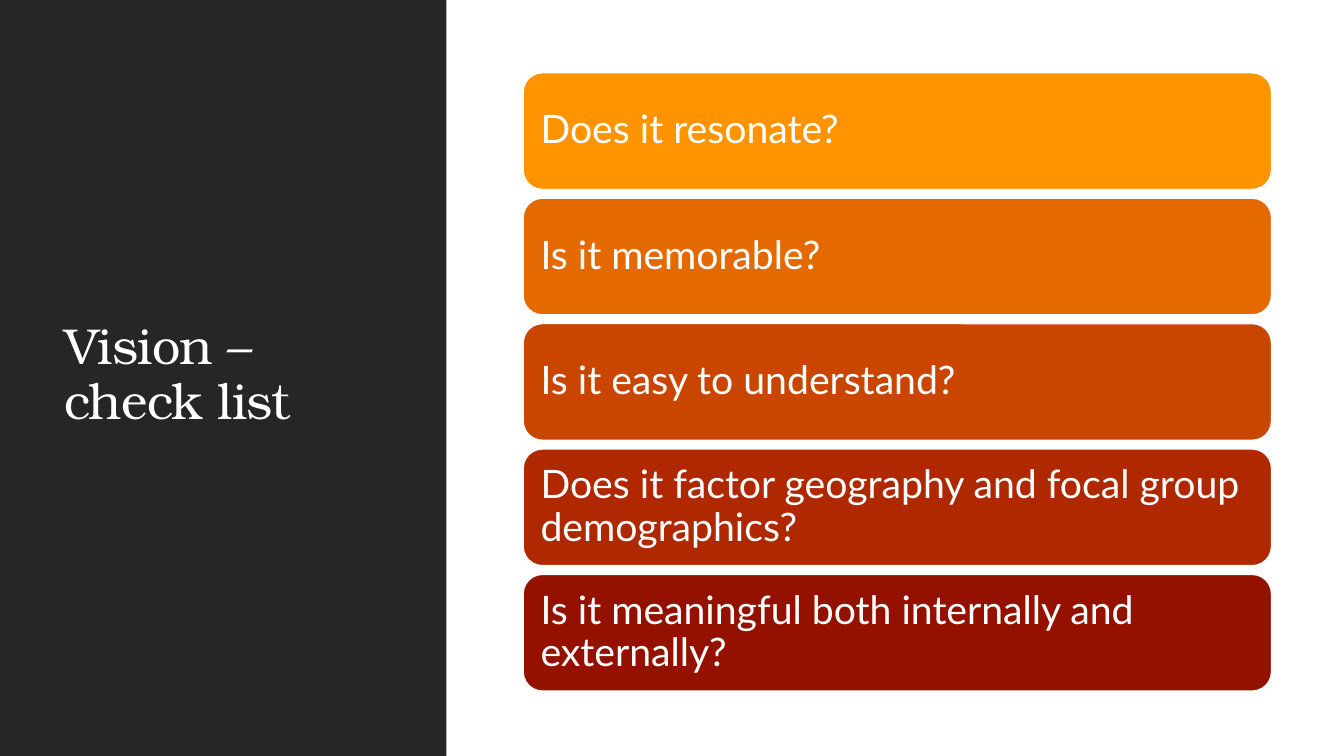
"""Build the vision check list slide."""
from pptx import Presentation
from pptx.dml.color import RGBColor
from pptx.enum.shapes import MSO_SHAPE
from pptx.enum.text import MSO_ANCHOR, PP_ALIGN
from pptx.util import Cm, Pt

RECTANGLE = MSO_SHAPE.RECTANGLE
ROUNDED_RECTANGLE = MSO_SHAPE.ROUNDED_RECTANGLE
MIDDLE = MSO_ANCHOR.MIDDLE
LEFT = PP_ALIGN.LEFT

WHITE = RGBColor(0xFF, 0xFF, 0xFF)
CHARCOAL = RGBColor(0x26, 0x26, 0x26)
AMBER = RGBColor(0xFF, 0x93, 0x00)
ORANGE = RGBColor(0xE4, 0x69, 0x00)
RUST = RGBColor(0xCA, 0x46, 0x00)
BRICK = RGBColor(0xAF, 0x28, 0x00)
DARK_RED = RGBColor(0x94, 0x11, 0x00)

TITLE_FONT = "TeX Gyre Bonum"
BODY_FONT = "Lato"

QUESTIONS = [
    ("Does it resonate?", AMBER),
    ("Is it memorable?", ORANGE),
    ("Is it easy to understand?", RUST),
    ("Does it factor geography and focal group demographics?", BRICK),
    ("Is it meaningful both internally and externally?", DARK_RED),
]
FIRST_BAR_TOP = 1.83
BAR_PITCH = 3.16


def write_text(shape, text, font_name, size):
    """Write one white, left-aligned line of text and return its run."""
    frame = shape.text_frame
    frame.word_wrap = True
    frame.vertical_anchor = MIDDLE
    paragraph = frame.paragraphs[0]
    paragraph.alignment = LEFT
    paragraph.line_spacing = 0.9
    run = paragraph.add_run()
    run.text = text
    run.font.name = font_name
    run.font.size = Pt(size)
    run.font.color.rgb = WHITE
    return run


def add_side_panel(slide, height):
    """Add the dark panel on the left."""
    panel = slide.shapes.add_shape(RECTANGLE, 0, 0, Cm(11.25), height)
    panel.shadow.inherit = False
    panel.fill.solid()
    panel.fill.fore_color.rgb = CHARCOAL
    panel.line.fill.background()


def add_title(slide, text):
    """Add the slide title with slightly tightened letters."""
    title = slide.shapes.add_textbox(Cm(1.37), Cm(1.45), Cm(8.56), Cm(16.03))
    run = write_text(title, text, TITLE_FONT, 36)
    run.font._element.set("spc", "-50")


def add_question_bar(slide, top, text, color):
    """Add one rounded bar holding a question."""
    bar = slide.shapes.add_shape(
        ROUNDED_RECTANGLE, Cm(13.18), Cm(top), Cm(18.87), Cm(2.95))
    bar.shadow.inherit = False
    bar.fill.solid()
    bar.fill.fore_color.rgb = color
    bar.line.color.rgb = WHITE
    bar.line.width = Pt(1.25)
    frame = bar.text_frame
    frame.margin_left = frame.margin_right = Cm(0.3)
    frame.margin_top = frame.margin_bottom = Cm(0.3)
    write_text(bar, text, BODY_FONT, 28)


def main():
    """Assemble and save the slide."""
    presentation = Presentation()
    presentation.slide_width = Cm(33.87)
    presentation.slide_height = Cm(19.05)
    slide = presentation.slides.add_slide(presentation.slide_layouts[6])
    add_side_panel(slide, presentation.slide_height)
    add_title(slide, "Vision – check list")
    for index, (question, color) in enumerate(QUESTIONS):
        add_question_bar(slide, FIRST_BAR_TOP + index * BAR_PITCH, question, color)
    presentation.save("out.pptx")


if __name__ == "__main__":
    main()
